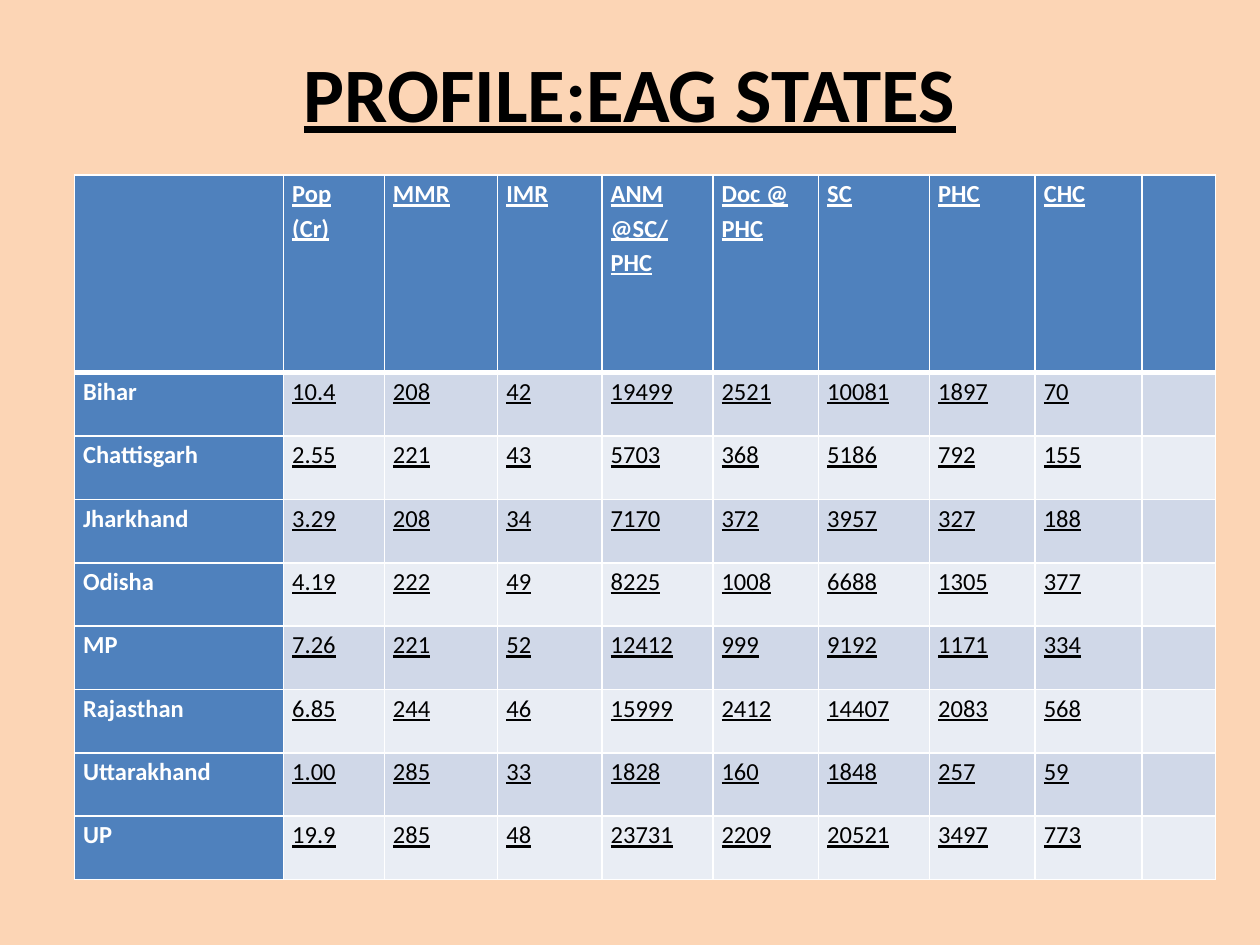
from lxml import etree
from pptx import Presentation
from pptx.dml.color import RGBColor
from pptx.enum import text
from pptx.oxml import ns
from pptx.util import Pt

HEADINGS = ["", "Pop\n(Cr)", "MMR", "IMR", "ANM\n@SC/\nPHC", "Doc @\nPHC", "SC", "PHC", "CHC", ""]
STATES = [
    ["Bihar", "10.4", "208", "42", "19499", "2521", "10081", "1897", "70", ""],
    ["Chattisgarh", "2.55", "221", "43", "5703", "368", "5186", "792", "155", ""],
    ["Jharkhand", "3.29", "208", "34", "7170", "372", "3957", "327", "188", ""],
    ["Odisha", "4.19", "222", "49", "8225", "1008", "6688", "1305", "377", ""],
    ["MP", "7.26", "221", "52", "12412", "999", "9192", "1171", "334", ""],
    ["Rajasthan", "6.85", "244", "46", "15999", "2412", "14407", "2083", "568", ""],
    ["Uttarakhand", "1.00", "285", "33", "1828", "160", "1848", "257", "59", ""],
    ["UP", "19.9", "285", "48", "23731", "2209", "20521", "3497", "773", ""],
]
COLUMN_WIDTHS = [119.5, 57.6, 64.8, 59.6, 63.4, 60.4, 63.4, 60.4, 61.2, 41.8]
ROW_HEIGHTS = [113] + [36.2] * len(STATES)


def colour(value):
    return RGBColor.from_string(value)


class SlideBuilder:
    font = "Calibri"
    background = "FCD5B5"
    accent = "4F81BD"
    bands = ("D0D8E8", "E9EDF4")
    light = "FFFFFF"
    dark = "000000"

    def __init__(self, page):
        self.page = page
        fill = page.background.fill
        fill.solid()
        fill.fore_color.rgb = colour(self.background)

    def style(self, para, size, ink, bold, underline):
        font = para.font
        font.name = self.font
        font.size = Pt(size)
        font.bold = bold
        font.underline = underline
        font.color.rgb = colour(ink)

    def title(self, words, left, top, width, height):
        box = self.page.shapes.title
        box.left, box.top, box.width, box.height = map(Pt, (left, top, width, height))
        frame = box.text_frame
        frame.text = words
        frame.vertical_anchor = text.MSO_ANCHOR.MIDDLE
        para = frame.paragraphs[0]
        para.alignment = text.PP_ALIGN.CENTER
        self.style(para, 44, self.dark, True, True)

    def border(self, cell, side, width):
        properties = cell._tc.get_or_add_tcPr()
        line = etree.SubElement(properties, ns.qn(f"a:ln{side}"), w=str(Pt(width)))
        fill = etree.SubElement(line, ns.qn("a:solidFill"))
        etree.SubElement(fill, ns.qn("a:srgbClr"), val=self.light)

    def cell(self, cell, words, row, column):
        heading = row == 0
        label = heading or column == 0
        widths = {"L": 1, "R": 1, "T": 3 if row == 1 else 1, "B": 3 if heading else 1}
        for side, width in widths.items():
            self.border(cell, side, width)
        cell.fill.solid()
        cell.fill.fore_color.rgb = colour(self.accent if label else self.bands[(row - 1) % 2])
        if not words:
            return
        cell.margin_left = cell.margin_right = Pt(5)
        cell.margin_top = cell.margin_bottom = Pt(0)
        cell.text_frame.text = words
        for para in cell.text_frame.paragraphs:
            para.line_spacing = 1.15
            self.style(para, 14, self.light if label else self.dark, label, heading or column > 0)

    def table(self, rows, left, top, widths, heights):
        frame = self.page.shapes.add_table(
            len(rows), len(widths), Pt(left), Pt(top), Pt(sum(widths)), Pt(sum(heights)))
        table = frame.table
        table.first_col = True
        for column, width in zip(table.columns, widths):
            column.width = Pt(width)
        for table_row, height in zip(table.rows, heights):
            table_row.height = Pt(height)
        for row, values in enumerate(rows):
            for column, words in enumerate(values):
                self.cell(table.cell(row, column), words, row, column)


def main():
    deck = Presentation()
    deck.slide_width, deck.slide_height = Pt(720), Pt(540)
    builder = SlideBuilder(deck.slides.add_slide(deck.slide_layouts[5]))
    builder.title("PROFILE:EAG STATES", 36, 21.6, 648, 61.2)
    builder.table([HEADINGS] + STATES, 42.5, 100, COLUMN_WIDTHS, ROW_HEIGHTS)
    deck.save("out.pptx")


if __name__ == "__main__":
    main()
